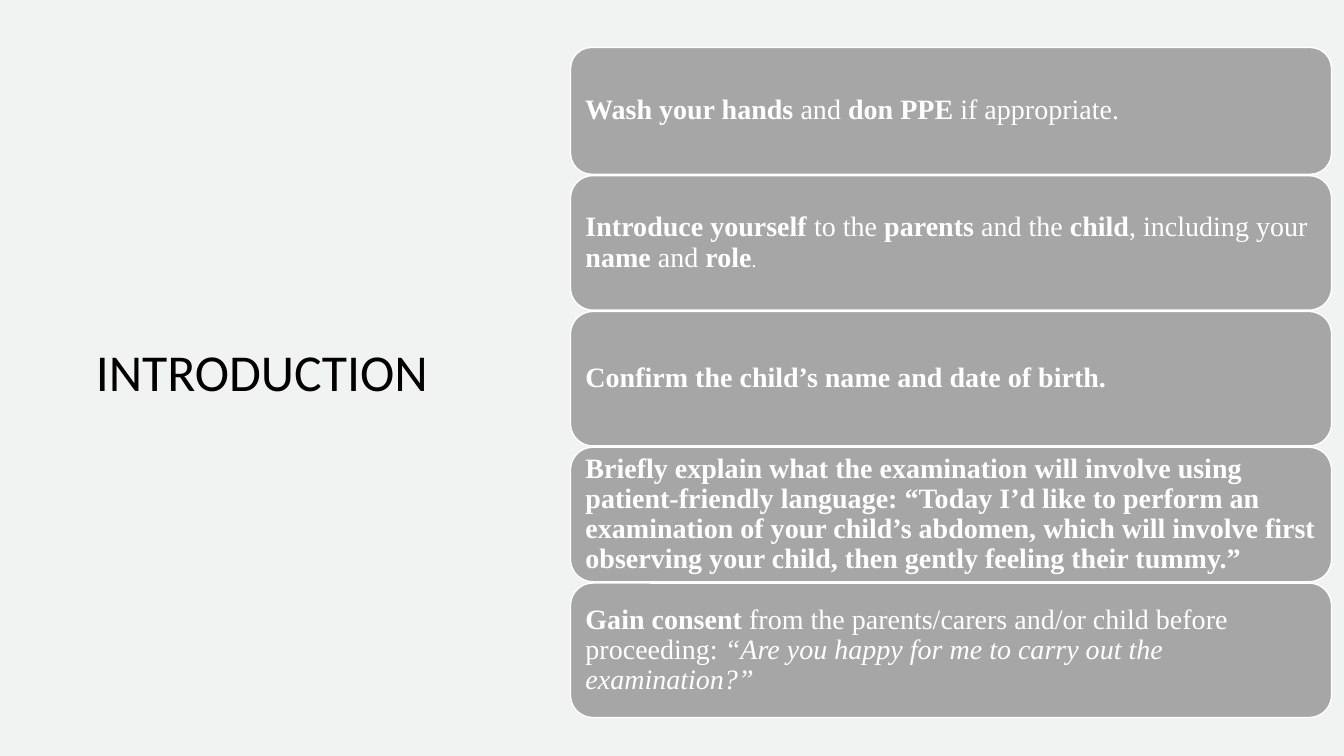
from pptx import Presentation
from pptx.dml.color import RGBColor
from pptx.enum.shapes import MSO_SHAPE
from pptx.enum.text import MSO_ANCHOR, MSO_AUTO_SIZE, PP_ALIGN
from pptx.util import Pt

ROUNDED = MSO_SHAPE.ROUNDED_RECTANGLE
MIDDLE = MSO_ANCHOR.MIDDLE
LEFT = PP_ALIGN.LEFT
NO_AUTOFIT = MSO_AUTO_SIZE.NONE

BACKGROUND = RGBColor(0xF0, 0xF3, 0xF1)
CARD_GREY = RGBColor(0xA6, 0xA6, 0xA6)
WHITE = RGBColor(0xFF, 0xFF, 0xFF)
BLACK = RGBColor(0x00, 0x00, 0x00)

# Card stack, in points
CARD_LEFT, CARD_WIDTH = 407.5, 543.6
STACK_TOP, CARD_GAP = 33.9, 1
CARD_INSET = 6

# Run styles: bold, italic, size (None keeps the paragraph's size)
PLAIN = (False, False, None)
BOLD = (True, False, None)
ITALIC = (False, True, None)
SMALL = (False, False, 14)

# Each step: card height and its styled runs
STEPS = [
    (90.6, [("Wash your hands", BOLD), (" and ", PLAIN), ("don PPE", BOLD),
            (" if appropriate.", PLAIN)]),
    (96, [("Introduce yourself", BOLD), (" to the ", PLAIN), ("parents", BOLD),
          (" and the ", PLAIN), ("child", BOLD), (", including your ", PLAIN),
          ("name", BOLD), (" and ", PLAIN), ("role", BOLD), (".", SMALL)]),
    (96, [("Confirm the child’s name and date of birth.", BOLD)]),
    (96, [("Briefly explain what the examination will involve using "
           "patient-friendly language: “Today I’d like to perform an "
           "examination of your child’s abdomen, which will involve first "
           "observing your child, then gently feeling their tummy.”", BOLD)]),
    (96, [("Gain consent", BOLD),
          (" from the parents/carers and/or child before proceeding: ", PLAIN),
          ("“Are you happy for me to carry out the examination?”", ITALIC)]),
]


def format_paragraph(paragraph, font_name, size, color):
    paragraph.alignment = LEFT
    paragraph.line_spacing = 0.9
    paragraph.font.name = font_name
    paragraph.font.size = Pt(size)
    paragraph.font.color.rgb = color


def set_title(slide, text):
    title = slide.shapes.title
    title.left, title.top = Pt(61.2), Pt(38.9)
    title.width, title.height = Pt(311), Pt(458)
    frame = title.text_frame
    frame.text = text
    frame.auto_size = NO_AUTOFIT
    frame.vertical_anchor = MIDDLE
    format_paragraph(frame.paragraphs[0], "Calibri", 37, BLACK)


def add_card(slide, top, height, runs):
    card = slide.shapes.add_shape(
        ROUNDED, Pt(CARD_LEFT), Pt(top), Pt(CARD_WIDTH), Pt(height))
    card.shadow.inherit = False
    card.fill.solid()
    card.fill.fore_color.rgb = CARD_GREY
    card.line.color.rgb = WHITE
    card.line.width = Pt(1)

    frame = card.text_frame
    frame.word_wrap = True
    frame.vertical_anchor = MIDDLE
    frame.margin_left = frame.margin_right = Pt(CARD_INSET)
    frame.margin_top = frame.margin_bottom = Pt(CARD_INSET)
    paragraph = frame.paragraphs[0]
    format_paragraph(paragraph, "Times New Roman", 20, WHITE)
    for text, (bold, italic, size) in runs:
        run = paragraph.add_run()
        run.text = text
        run.font.bold = bold
        run.font.italic = italic
        if size:
            run.font.size = Pt(size)


def main():
    presentation = Presentation()
    presentation.slide_width, presentation.slide_height = Pt(960), Pt(540)
    title_only = presentation.slide_layouts[5]
    slide = presentation.slides.add_slide(title_only)

    # Background and title
    slide.background.fill.solid()
    slide.background.fill.fore_color.rgb = BACKGROUND
    set_title(slide, "INTRODUCTION")

    # Stack of steps
    top = STACK_TOP
    for height, runs in STEPS:
        add_card(slide, top, height, runs)
        top += height + CARD_GAP

    presentation.save("out.pptx")


if __name__ == "__main__":
    main()
